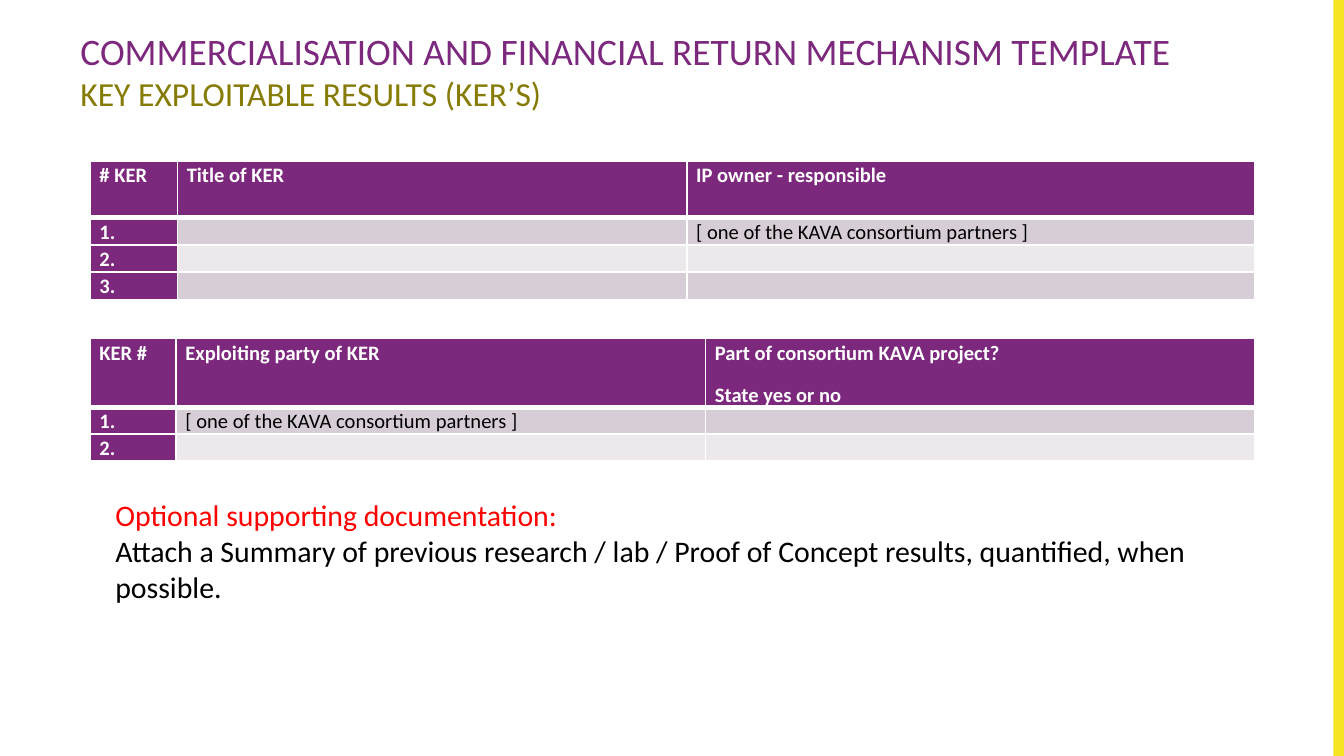
from pptx import Presentation
from pptx.dml.color import RGBColor
from pptx.enum.shapes import MSO_SHAPE as Shape
from pptx.oxml.xmlchemy import OxmlElement as Element
from pptx.util import Inches, Pt

PURPLE = RGBColor(0x7C, 0x28, 0x7D)
OLIVE = RGBColor(0x86, 0x7B, 0x05)
YELLOW = RGBColor(0xF6, 0xE4, 0x21)
DARK_BAND = RGBColor(0xD7, 0xCD, 0xD7)
LIGHT_BAND = RGBColor(0xEC, 0xE8, 0xEC)
RED = RGBColor(0xFF, 0, 0)
BLACK = RGBColor(0, 0, 0)
WHITE = RGBColor(0xFF, 0xFF, 0xFF)
FONT = "Calibri"
SLIDE_WIDTH = 10
SLIDE_HEIGHT = SLIDE_WIDTH * 9 / 16


def style_text(paragraph, size, color, bold=False):
    """Set the font of a whole paragraph."""
    font = paragraph.font
    font.name, font.size, font.bold = FONT, Pt(size), bold
    font.color.rgb = color


def add_lines(slide, box, lines, margin_top):
    """Write (text, size, colour) lines into a wrapped text box."""
    frame = slide.shapes.add_textbox(*map(Inches, box)).text_frame
    frame.word_wrap = True
    frame.margin_top = Inches(margin_top)
    for index, (text, size, color) in enumerate(lines):
        line = frame.add_paragraph() if index else frame.paragraphs[0]
        line.text = text
        style_text(line, size, color)


def add_edge_band(slide, box):
    """Draw the yellow band along the slide edge."""
    band = slide.shapes.add_shape(Shape.RECTANGLE, *map(Inches, box))
    band.shadow.inherit = False
    band.fill.solid()
    band.fill.fore_color.rgb = YELLOW
    band.line.fill.background()


def add_borders(cell, row):
    """Rule a cell in white, with a thick line below the header."""
    widths = {"L": 1, "R": 1, "T": 3 if row == 1 else 1, "B": 3 if row == 0 else 1}
    properties = cell._tc.get_or_add_tcPr()
    for side, width in widths.items():
        border = Element(f"a:ln{side}")
        border.set("w", str(Pt(width)))
        fill = Element("a:solidFill")
        color = Element("a:srgbClr")
        color.set("val", str(WHITE))
        fill.append(color)
        border.append(fill)
        properties.append(border)


def fill_cell(cell, text, row, column):
    """Write and colour one cell by its place in the table."""
    add_borders(cell, row)
    heading = row == 0 or column == 0
    cell.fill.solid()
    cell.fill.fore_color.rgb = PURPLE if heading else DARK_BAND if row % 2 else LIGHT_BAND
    cell.margin_left = cell.margin_right = Inches(0.07)
    cell.margin_top = cell.margin_bottom = 0
    cell.text_frame.text = text
    for paragraph in cell.text_frame.paragraphs:
        paragraph.line_spacing = 1.07
        paragraph.space_after = Pt(8)
        style_text(paragraph, 11, WHITE if heading else BLACK, heading)
        if not text:
            end = Element("a:endParaRPr")
            end.set("sz", "1100")
            paragraph._p.append(end)


def add_result_table(slide, box, column_widths, header_height, rows):
    """Place a table of exploitable results with equal rows below its header."""
    frame = slide.shapes.add_table(len(rows), len(column_widths), *map(Inches, box))
    table = frame.table
    table.horz_banding = False
    for column, width in zip(table.columns, column_widths):
        column.width = Inches(width)
    row_height = (box[3] - header_height) / (len(rows) - 1)
    for r, texts in enumerate(rows):
        table.rows[r].height = Inches(row_height if r else header_height)
        for c, text in enumerate(texts):
            fill_cell(table.cell(r, c), text, r, c)


def main():
    """Build the key exploitable results slide."""
    deck = Presentation()
    deck.slide_width, deck.slide_height = Inches(SLIDE_WIDTH), Inches(SLIDE_HEIGHT)
    slide = deck.slides.add_slide(deck.slide_layouts[6])
    partner = "[ one of the KAVA consortium partners ]"

    add_edge_band(slide, (9.92, 0, 0.08, SLIDE_HEIGHT))
    add_lines(slide, (0.5, 0.21, 9.22, 0.94), [
        ("COMMERCIALISATION AND FINANCIAL RETURN MECHANISM TEMPLATE", 20, PURPLE),
        ("KEY EXPLOITABLE RESULTS (KER’S)", 18, OLIVE),
    ], 0)
    add_result_table(slide, (0.67, 1.2, 8.67, 1.03), (0.65, 3.79, 4.23), 0.42, [
        ("# KER", "Title of KER", "IP owner - responsible"),
        ("1.", "", partner),
        ("2.", "", ""),
        ("3.", "", ""),
    ])
    add_result_table(slide, (0.67, 2.52, 8.67, 0.91), (0.64, 3.94, 4.09), 0.51, [
        ("KER #", "Exploiting party of KER", "Part of consortium KAVA project?\nState yes or no"),
        ("1.", partner, ""),
        ("2.", "", ""),
    ])
    add_lines(slide, (0.76, 3.65, 8.71, 1.25), [
        ("Optional supporting documentation:", 16, RED),
        ("Attach a Summary of previous research / lab / Proof of Concept results, "
         "quantified, when possible.", 16, BLACK),
    ], 0.05)
    deck.save("out.pptx")


if __name__ == "__main__":
    main()
